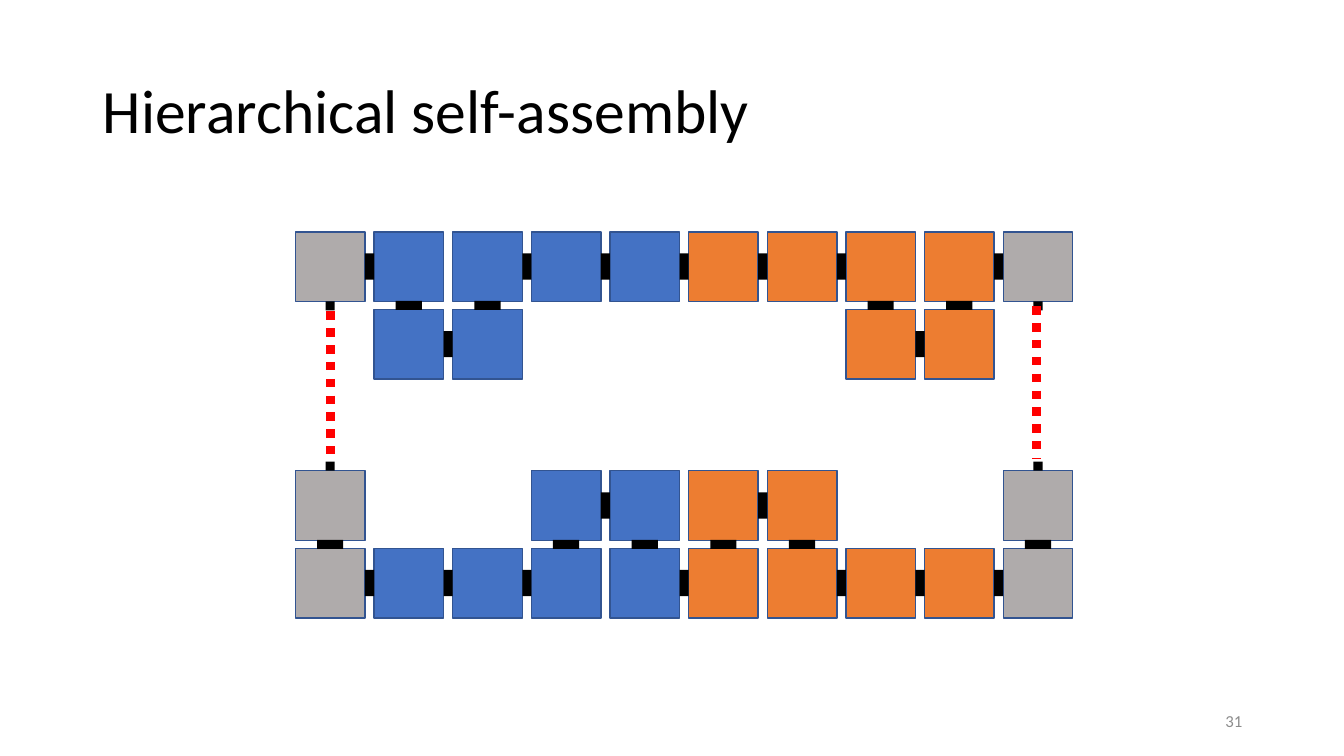
from itertools import pairwise

from lxml import etree
from pptx import Presentation
from pptx.dml.color import RGBColor
from pptx.enum import dml, shapes, text
from pptx.oxml import ns
from pptx.util import Inches, Pt

TILE, PITCH_X, PITCH_Y = 0.69, 0.78, 0.77
JOINT_LENGTH, JOINT_DEPTH = 0.26, 0.09
COLUMN_COLOURS = ["AFABAB"] + ["4472C4"] * 4 + ["ED7D31"] * 4 + ["AFABAB"]
CHAIN_LEFT, UPPER_TOP, LOWER_TOP = 2.93, 2.3, 4.67
UPPER_CHAIN = ([(0, 0), (1, 0), (1, 1), (2, 1)] + [(column, 0) for column in range(2, 8)]
               + [(7, 1), (8, 1), (8, 0), (9, 0)])
LOWER_CHAIN = [(0, 0), (0, 1), (1, 1), (2, 1), (3, 1), (3, 0), (4, 0), (4, 1),
               (5, 1), (5, 0), (6, 0), (6, 1), (7, 1), (8, 1), (9, 1), (9, 0)]


def colour(hex_string):
    """Turn a hex string into a colour."""
    return RGBColor.from_string(hex_string)


def write(holder, words, size, hex_colour, align=text.PP_ALIGN.LEFT, spacing=1.0):
    """Put one formatted paragraph into a shape."""
    frame = holder.text_frame
    frame.word_wrap = True
    frame.auto_size = text.MSO_AUTO_SIZE.NONE
    frame.vertical_anchor = text.MSO_ANCHOR.MIDDLE
    paragraph = frame.paragraphs[0]
    paragraph.alignment = align
    paragraph.line_spacing = spacing
    run = paragraph.add_run()
    run.text = words
    run.font.name = "Calibri"
    run.font.size = Pt(size)
    run.font.color.rgb = colour(hex_colour)


def add_block(group, centre, width, height, fill, outline=None):
    """Draw a filled rectangle around a centre point."""
    x, y = centre
    block = group.shapes.add_shape(
        shapes.MSO_SHAPE.RECTANGLE, Inches(x - width / 2), Inches(y - height / 2),
        Inches(width), Inches(height))
    block.shadow.inherit = False
    block.fill.solid()
    block.fill.fore_color.rgb = colour(fill)
    if outline:
        block.line.color.rgb = colour(outline)
        block.line.width = Pt(1)
    else:
        block.line.fill.background()


def add_chain(slide, left, top, cells, stub_y):
    """Draw a chain of tiles with its joints, and a binding stub at each end."""
    group = slide.shapes.add_group_shape()
    centres = [(left + TILE / 2 + column * PITCH_X, top + TILE / 2 + row * PITCH_Y)
               for column, row in cells]
    for (column, _), centre in zip(cells, centres):
        add_block(group, centre, TILE, TILE, COLUMN_COLOURS[column], outline="325491")
    for (x1, y1), (x2, y2) in pairwise(centres):
        size = (JOINT_DEPTH, JOINT_LENGTH) if y1 == y2 else (JOINT_LENGTH, JOINT_DEPTH)
        add_block(group, ((x1 + x2) / 2, (y1 + y2) / 2), *size, "000000")
    for x, _ in (centres[0], centres[-1]):
        add_block(group, (x, stub_y), JOINT_DEPTH, JOINT_DEPTH, "000000")


def add_bond(slide, x, top, bottom):
    """Draw a dotted vertical bond between two stubs."""
    bond = slide.shapes.add_connector(
        shapes.MSO_CONNECTOR.STRAIGHT, Inches(x), Inches(top), Inches(x), Inches(bottom))
    bond.line.color.rgb = colour("FF0000")
    bond.line.width = Pt(6)
    bond.line.dash_style = dml.MSO_LINE.ROUND_DOT
    etree.SubElement(bond._element.spPr, ns.qn("a:effectLst"))


def add_title(slide, left, top, width, height):
    """Place and format the title."""
    title = slide.shapes.title
    title.left, title.top = Inches(left), Inches(top)
    title.width, title.height = Inches(width), Inches(height)
    write(title, "Hierarchical self-assembly", 44, "000000", spacing=0.9)


def add_page_number(slide, left, top, width, height):
    """Place the page number."""
    number = slide.shapes.add_textbox(Inches(left), Inches(top), Inches(width), Inches(height))
    write(number, "31", 12, "8C8C8C", align=text.PP_ALIGN.RIGHT)


def main():
    """Build the slide and save it."""
    deck = Presentation()
    deck.slide_width, deck.slide_height = Inches(13.33), Inches(7.5)
    slide = deck.slides.add_slide(deck.slide_layouts[5])
    add_title(slide, 0.92, 0.4, 6.66, 1.45)
    add_page_number(slide, 9.42, 6.95, 3, 0.4)
    add_chain(slide, CHAIN_LEFT, UPPER_TOP, UPPER_CHAIN, UPPER_TOP + TILE + JOINT_DEPTH / 2)
    add_chain(slide, CHAIN_LEFT, LOWER_TOP, LOWER_CHAIN, LOWER_TOP - JOINT_DEPTH / 2)
    add_bond(slide, 3.28, 3.09, 4.59)
    add_bond(slide, 10.28, 3.04, 4.55)
    deck.save("out.pptx")


if __name__ == "__main__":
    main()
